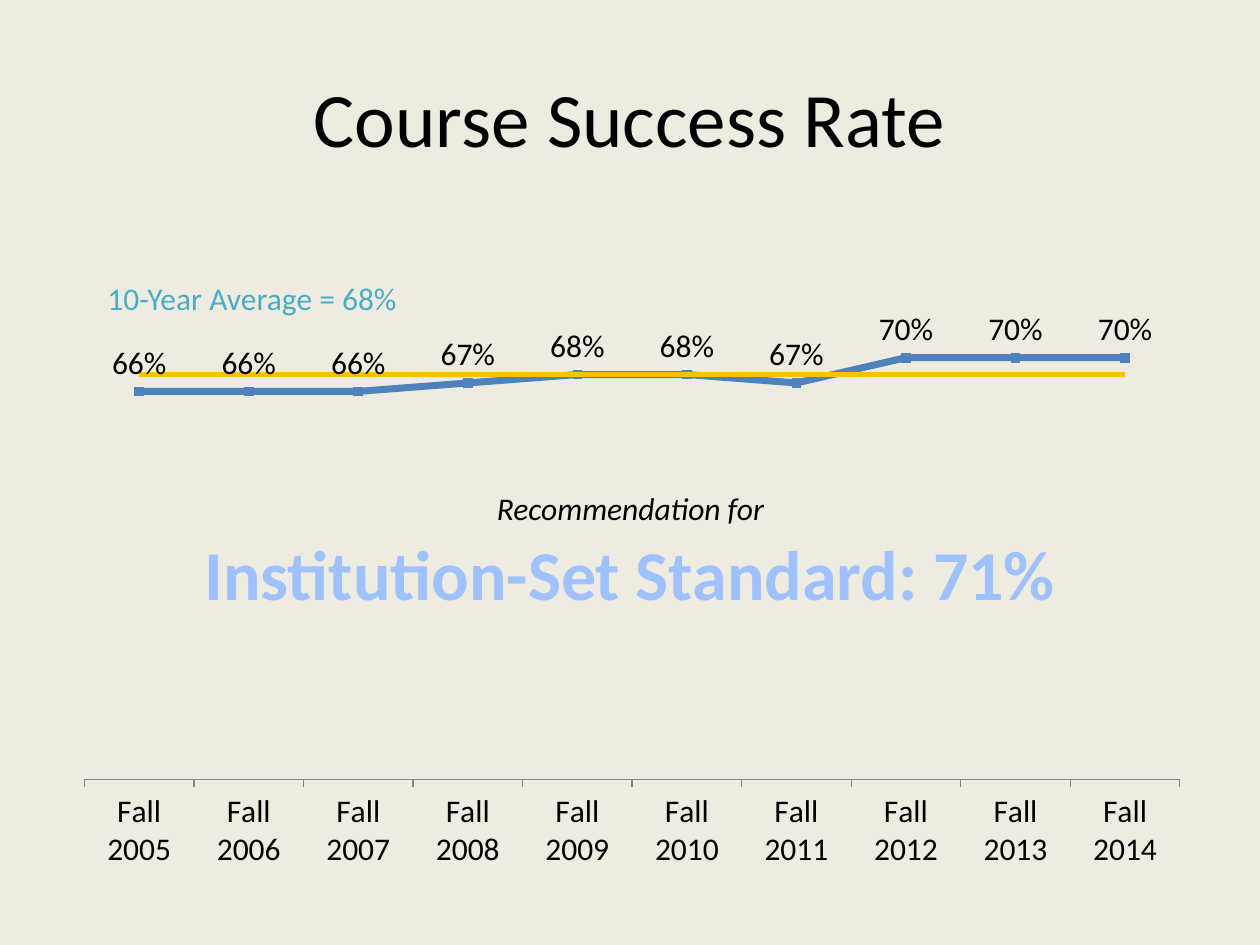
from lxml import etree
from pptx import Presentation
from pptx import util as u
from pptx.chart.data import CategoryChartData
from pptx.dml.color import RGBColor
from pptx.enum import chart as ch
from pptx.enum import text as t
from pptx.oxml.ns import qn

PX = 914400 / 126
FONT = "Calibri"
BACKGROUND = RGBColor(0xEE, 0xEC, 0xE1)
BLACK = RGBColor(0, 0, 0)
BLUE = RGBColor(0x4F, 0x81, 0xBD)
GOLD = RGBColor(0xFF, 0xC0, 0x00)
TEAL = RGBColor(0x4B, 0xAC, 0xC6)
PALE_BLUE = RGBColor(0xA0, 0xC1, 0xFF)
GREY = RGBColor(0x86, 0x86, 0x86)

YEARS = range(2005, 2015)
SUCCESS_RATES = [0.66, 0.66, 0.66, 0.67, 0.68, 0.68, 0.67, 0.70, 0.70, 0.70]
AVERAGE = 0.68

CHART_BOX = (63, 189, 1134, 703)
PLOT_LAYOUT = {"x": 0.019, "y": 0, "w": 0.966, "h": 0.84}

# wording, box in px, size in points, colour, alignment, bold, italic
TITLE = ("Course Success Rate", (63, 38, 1134, 158), 44, BLACK, t.PP_ALIGN.CENTER, False, False)
NOTES_ON_CHART = [
    ("10-Year Average = 68%", (95, 273, 357, 50), 18, TEAL, t.PP_ALIGN.LEFT, False, False),
    ("Institution-Set Standard: 71%", (0, 524, 1260, 97), 40, PALE_BLUE, t.PP_ALIGN.CENTER, True, False),
    ("Recommendation for", (95, 483, 1071, 50), 18, BLACK, t.PP_ALIGN.CENTER, False, True),
]


def emu(lengths):
    return [u.Emu(round(length * PX)) for length in lengths]


def add_text(slide, wording, box, size, colour, alignment, bold, italic):
    shape = slide.shapes.add_textbox(*emu(box))
    frame = shape.text_frame
    frame.word_wrap = True
    paragraph = frame.paragraphs[0]
    paragraph.text = wording
    paragraph.alignment = alignment
    font = paragraph.font
    font.name, font.size, font.color.rgb = FONT, u.Pt(size), colour
    font.bold, font.italic = bold, italic
    return shape


def set_plot_layout(chart):
    """Fix the inner plot area as fractions of the chart."""
    plot_area = chart.plots[0]._element.getparent()
    layout = plot_area.find(qn("c:layout"))
    if layout is None:
        layout = etree.Element(qn("c:layout"))
        plot_area.insert(0, layout)
    manual = etree.SubElement(layout, qn("c:manualLayout"))
    settings = {"layoutTarget": "inner", "xMode": "edge", "yMode": "edge", **PLOT_LAYOUT}
    for name, value in settings.items():
        etree.SubElement(manual, qn(f"c:{name}")).set("val", str(value))


def style_series(series, colour, width, marker_style):
    series.smooth = False
    series.format.line.color.rgb = colour
    series.format.line.width = u.Pt(width)
    series.marker.style = marker_style


def add_rate_chart(slide):
    data = CategoryChartData(number_format="0%")
    data.categories = [f"Fall {year}" for year in YEARS]
    data.add_series("Series 1", SUCCESS_RATES)
    data.add_series("Series 2", [AVERAGE] * len(YEARS))
    chart = slide.shapes.add_chart(
        ch.XL_CHART_TYPE.LINE_MARKERS, *emu(CHART_BOX), data).chart
    chart.has_legend = chart.has_title = False
    chart.font.name, chart.font.size, chart.font.color.rgb = FONT, u.Pt(18), BLACK
    chart.plots[0].vary_by_categories = False
    set_plot_layout(chart)

    category_axis = chart.category_axis
    category_axis.major_tick_mark = ch.XL_TICK_MARK.OUTSIDE
    category_axis.format.line.color.rgb = GREY
    value_axis = chart.value_axis
    value_axis.minimum_scale, value_axis.maximum_scale = 0.2, 0.9
    value_axis.major_unit = 0.05
    value_axis.has_major_gridlines = False
    value_axis.visible = False

    rates, average = chart.plots[0].series
    style_series(rates, BLUE, 4, ch.XL_MARKER_STYLE.SQUARE)
    style_series(average, GOLD, 3, ch.XL_MARKER_STYLE.NONE)
    marker = rates.marker
    marker.size = 5
    marker.format.fill.solid()
    marker.format.fill.fore_color.rgb = BLUE
    marker.format.line.color.rgb = BLUE
    labels = rates.data_labels
    labels.show_value = True
    labels.position = ch.XL_LABEL_POSITION.ABOVE
    labels.number_format, labels.number_format_is_linked = "0%", False


def main():
    presentation = Presentation()
    presentation.slide_width, presentation.slide_height = emu((1260, 945))
    slide = presentation.slides.add_slide(presentation.slide_layouts[6])
    slide.background.fill.solid()
    slide.background.fill.fore_color.rgb = BACKGROUND

    title = add_text(slide, *TITLE)
    title.text_frame.vertical_anchor = t.MSO_ANCHOR.MIDDLE
    add_rate_chart(slide)
    for note in NOTES_ON_CHART:
        add_text(slide, *note)
    presentation.save("out.pptx")


if __name__ == "__main__":
    main()
